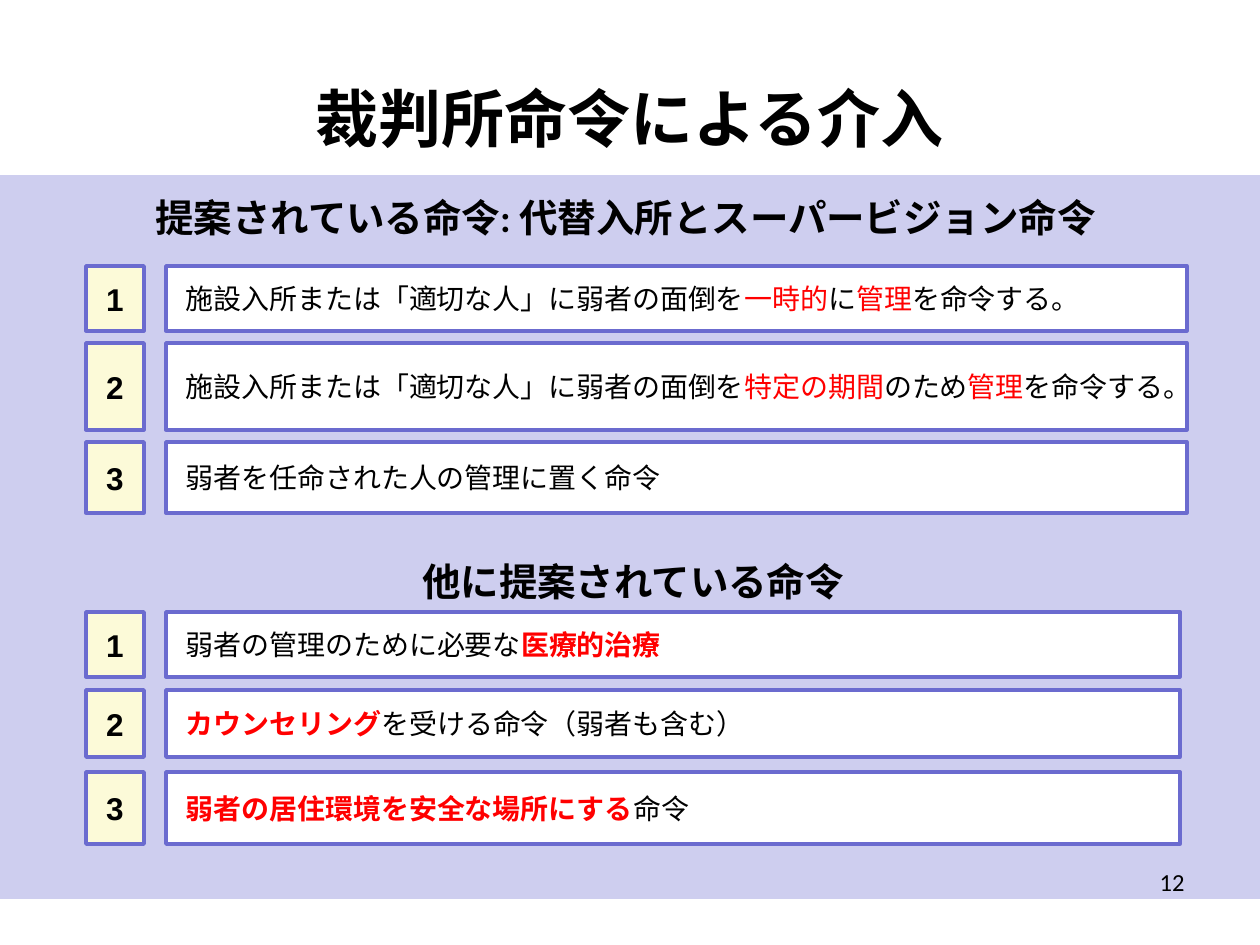
from pptx import Presentation
from pptx.dml.color import RGBColor
from pptx.enum.shapes import MSO_SHAPE as Shape
from pptx.enum.text import MSO_ANCHOR as Anchor, PP_ALIGN as Align
from pptx.util import Pt

PX = 914400 / 126
BLACK = RGBColor(0x00, 0x00, 0x00)
RED = RGBColor(0xFF, 0x00, 0x00)
WHITE = RGBColor(0xFF, 0xFF, 0xFF)
LAVENDER = RGBColor(0xCE, 0xCE, 0xEF)
VIOLET = RGBColor(0x6B, 0x6B, 0xCF)
CREAM = RGBColor(0xFC, 0xFA, 0xD8)

TITLE = {"name": "Calibri", "size": Pt(36), "bold": True}
HEADING = {"name": "Calibri", "size": Pt(22), "bold": True}
NUMBER = {"name": "Arial", "size": Pt(18), "bold": True}
ORDER = {"name": "Arial", "size": Pt(16), "bold": False}
PAGE = {"name": "Calibri", "size": Pt(14), "bold": False}
PLAIN = (BLACK, {})
MARKED = (RED, {})
STRONG = (RED, {"bold": True})

PROPOSED = [
    (266, 65, [("施設入所または「適切な人」に弱者の面倒を", PLAIN), ("一時的", MARKED),
               ("に", PLAIN), ("管理", MARKED), ("を命令する。", PLAIN)]),
    (343, 87, [("施設入所または「適切な人」に弱者の面倒を", PLAIN), ("特定の期間", MARKED),
               ("のため", PLAIN), ("管理", MARKED), ("を命令する。", PLAIN)]),
    (442, 71, [("弱者を任命された人の管理に置く命令", PLAIN)]),
]
OTHERS = [
    (612, 65, [("弱者の管理のために必要な", PLAIN), ("医療的治療", STRONG)]),
    (690, 67, [("カウンセリング", STRONG), ("を受ける命令（弱者も含む）", PLAIN)]),
    (772, 72, [("弱者の居住環境を安全な場所にする", STRONG), ("命令", PLAIN)]),
]


def px(*lengths):
    return [round(length * PX) for length in lengths]


def apply_format(target, values):
    for name, value in values.items():
        setattr(target, name, value)


def write(frame, runs, font, alignment):
    frame.word_wrap = True
    paragraph = frame.paragraphs[0]
    paragraph.alignment = alignment
    for text, (color, changes) in runs:
        run = paragraph.add_run()
        run.text = text
        apply_format(run.font, {**font, **changes})
        run.font.color.rgb = color


def add_label(slide, box, text, font, alignment):
    label = slide.shapes.add_textbox(*px(*box))
    write(label.text_frame, [(text, PLAIN)], font, alignment)


def add_rectangle(slide, box, fill):
    shape = slide.shapes.add_shape(Shape.RECTANGLE, *px(*box))
    shape.shadow.inherit = False
    shape.fill.solid()
    shape.fill.fore_color.rgb = fill
    shape.line.fill.background()
    return shape


def add_card(slide, box, fill, runs, font):
    card = add_rectangle(slide, box, fill)
    card.line.color.rgb = VIOLET
    card.line.width = Pt(2)
    inset = px(20)[0]
    sides = ("left", "top", "right", "bottom")
    apply_format(card.text_frame, {f"margin_{side}": inset for side in sides})
    card.text_frame.vertical_anchor = Anchor.MIDDLE
    write(card.text_frame, runs, font, Align.LEFT)


def add_orders(slide, left, width, orders):
    for number, (top, height, runs) in enumerate(orders, 1):
        add_card(slide, (left, top, 58, height), CREAM, [(str(number), PLAIN)], NUMBER)
        add_card(slide, (left + 80, top, width - 80, height), WHITE, runs, ORDER)


def add_title(slide, box, text):
    title = slide.shapes.title
    title.left, title.top, title.width, title.height = px(*box)
    title.text_frame.vertical_anchor = Anchor.MIDDLE
    write(title.text_frame, [(text, PLAIN)], TITLE, Align.CENTER)


def main():
    presentation = Presentation()
    presentation.slide_width, presentation.slide_height = px(1260, 945)
    slide = presentation.slides.add_slide(presentation.slide_layouts[5])
    add_title(slide, (63, 38, 1134, 158), "裁判所命令による介入")
    add_rectangle(slide, (0, 175, 1260, 724), LAVENDER)
    add_label(slide, (54, 188, 1143, 59),
              "提案されている命令: 代替入所とスーパービジョン命令", HEADING, Align.CENTER)
    add_orders(slide, 86, 1101, PROPOSED)
    add_label(slide, (86, 552, 1094, 59), "他に提案されている命令", HEADING, Align.CENTER)
    add_orders(slide, 86, 1094, OTHERS)
    add_label(slide, (903, 861, 294, 66), "12", PAGE, Align.RIGHT)
    presentation.save("out.pptx")


if __name__ == "__main__":
    main()
